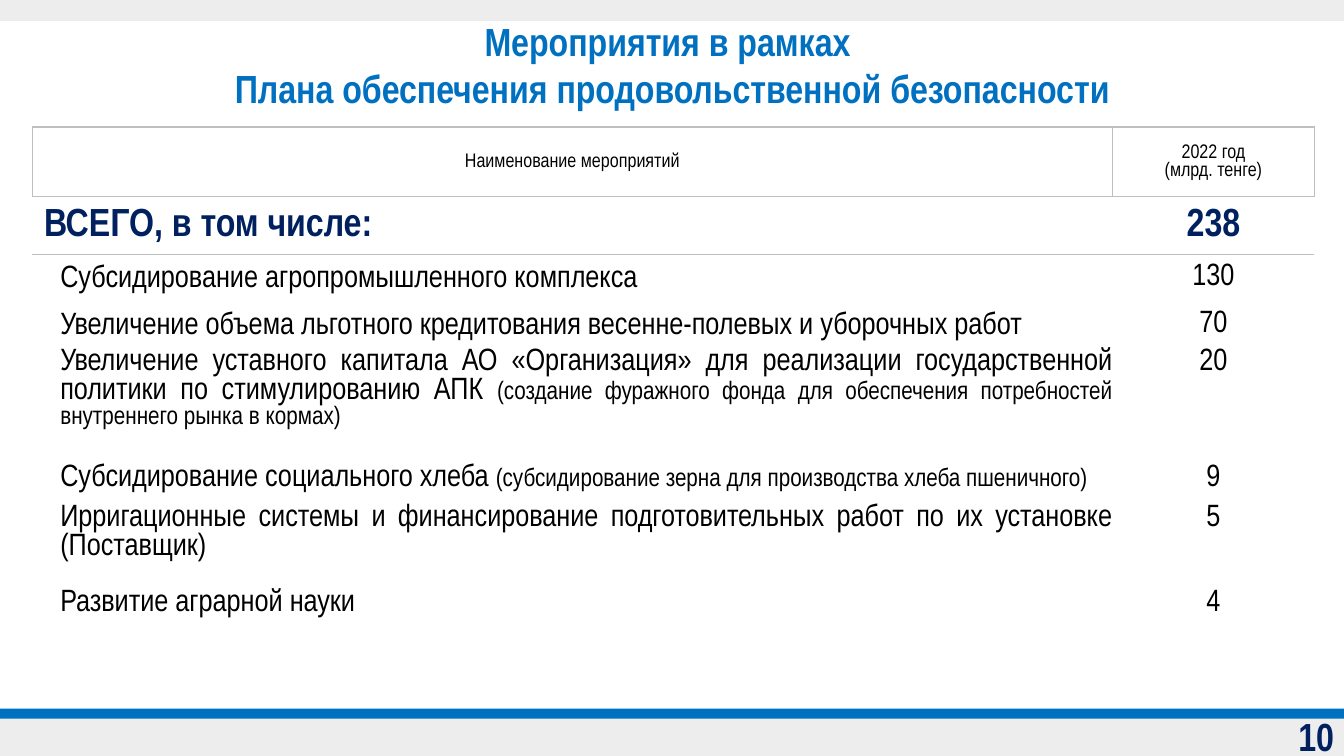
from lxml import etree
from pptx import Presentation
from pptx import util as u
from pptx.dml.color import RGBColor
from pptx.enum import shapes, text
from pptx.oxml.ns import qn

COLORS = {"blue": "0070C0", "navy": "002060", "black": "000000",
          "band": "EDEDED", "border": "BFBFBF"}
FONT = "Arial Narrow"
ALIGN, ANCHOR = text.PP_ALIGN, text.MSO_ANCHOR


def style(p, size, color, bold, align):
    p.alignment = align
    for r in p.runs:
        r.font.name = FONT
        r.font.size = u.Pt(size)
        r.font.bold = bold
        r.font.color.rgb = RGBColor.from_string(COLORS[color])


def set_border(cell, side):
    ln = etree.SubElement(cell._tc.get_or_add_tcPr(), qn("a:" + side), w="12700")
    fill = etree.SubElement(ln, qn("a:solidFill"))
    etree.SubElement(fill, qn("a:srgbClr"), val=COLORS["border"])


prs = Presentation()
prs.slide_width, prs.slide_height = u.Cm(33.87), u.Cm(19.05)
s = prs.slides.add_slide(prs.slide_layouts[5])

# Title
title = s.shapes.title
title.left, title.top, title.width, title.height = u.Cm(0), u.Cm(0.53), u.Cm(33.87), u.Cm(2.16)
tf = title.text_frame
tf.text = "Мероприятия в рамках \vПлана обеспечения продовольственной безопасности"
tf.vertical_anchor = ANCHOR.MIDDLE
tf.auto_size = text.MSO_AUTO_SIZE.NONE
style(tf.paragraphs[0], 28, "blue", True, ALIGN.CENTER)

# Bands at the bottom and the top
for top, height, color in [(18.08, 0.97, "band"), (17.86, 0.25, "blue"), (0, 0.53, "band")]:
    sp = s.shapes.add_shape(shapes.MSO_SHAPE.RECTANGLE, 0, u.Cm(top), prs.slide_width, u.Cm(height))
    sp.shadow.inherit = False
    sp.fill.solid()
    sp.fill.fore_color.rgb = RGBColor.from_string(COLORS[color])
    sp.line.fill.background()

# Page number
number = s.shapes.add_textbox(u.Cm(26.25), u.Cm(18.03), u.Cm(7.62), u.Cm(1.02))
tf = number.text_frame
tf.word_wrap = True
tf.vertical_anchor = ANCHOR.MIDDLE
tf.text = "10"
style(tf.paragraphs[0], 28, "navy", True, ALIGN.RIGHT)

# Table rows: height, label, note, value, anchor, left indent, line spacing
MID, TOP = ANCHOR.MIDDLE, ANCHOR.TOP
rows = [
    (1.75, "Наименование мероприятий", "", "2022 год\n(млрд. тенге)", MID, 0.03, None),
    (1.47, "ВСЕГО, в том числе:", "", "238", MID, 0.3, None),
    (1.14, "Субсидирование агропромышленного комплекса", "", "130", MID, 0.71, 1.1),
    (1.22, "Увеличение объема льготного кредитования весенне-полевых и уборочных работ",
     "", "70", MID, 0.71, 1.1),
    (1.83, "Увеличение уставного капитала АО «Организация» для реализации "
     "государственной политики по стимулированию АПК ",
     "(создание фуражного фонда для обеспечения потребностей внутреннего рынка в кормах)",
     "20", TOP, 0.71, None),
    (1.3, "Субсидирование социального хлеба ",
     "(субсидирование зерна для производства хлеба пшеничного)", "9", MID, 0.71, None),
    (1.83, "Ирригационные системы и финансирование подготовительных работ "
     "по их установке (Поставщик)", "", "5", TOP, 0.71, None),
    (1.3, "Развитие аграрной науки", "", "4", MID, 0.71, None),
]
# Size, colour, bold and label alignment of the first two rows and the rest
looks = [(14, "black", False, ALIGN.CENTER), (28, "navy", True, ALIGN.LEFT)]
body_look = (22, "black", False, ALIGN.JUSTIFY)

frame = s.shapes.add_table(len(rows), 2, u.Cm(0.81), u.Cm(3.2), u.Cm(32.31), u.Cm(11.84))
table = frame.table
table.first_row = table.horz_banding = False
table.columns[0].width, table.columns[1].width = u.Cm(27.23), u.Cm(5.08)

for i, (height, label, note, value, anchor, indent, spacing) in enumerate(rows):
    table.rows[i].height = u.Cm(height)
    size, color, bold, align = looks[i] if i < len(looks) else body_look
    inset = 0.03 if i < 4 else 0
    for j, content in enumerate((label, value)):
        cell = table.cell(i, j)
        cell.vertical_anchor = anchor
        cell.margin_left = u.Cm(inset if j else indent)
        cell.margin_right = cell.margin_top = u.Cm(inset)
        cell.margin_bottom = 0
        tf = cell.text_frame
        tf.text = content
        for p in tf.paragraphs:
            style(p, size, color, bold, ALIGN.CENTER if j else align)
        if j == 0:
            p = tf.paragraphs[0]
            p.line_spacing = spacing
            if note:
                r = p.add_run()
                r.text = note
                style(p, size, color, bold, align)
                r.font.size = u.Pt(18)
        # Only the header row is framed
        for side in {0: ("lnL", "lnR", "lnT", "lnB"), 1: ("lnT",)}.get(i, ()):
            set_border(cell, side)
        cell.fill.background()

# Plain table style without grid lines
frame._element.find(".//" + qn("a:tableStyleId")).text = "{2D5ABB26-0587-4C30-8999-92F81FD0307C}"

prs.save("out.pptx")
